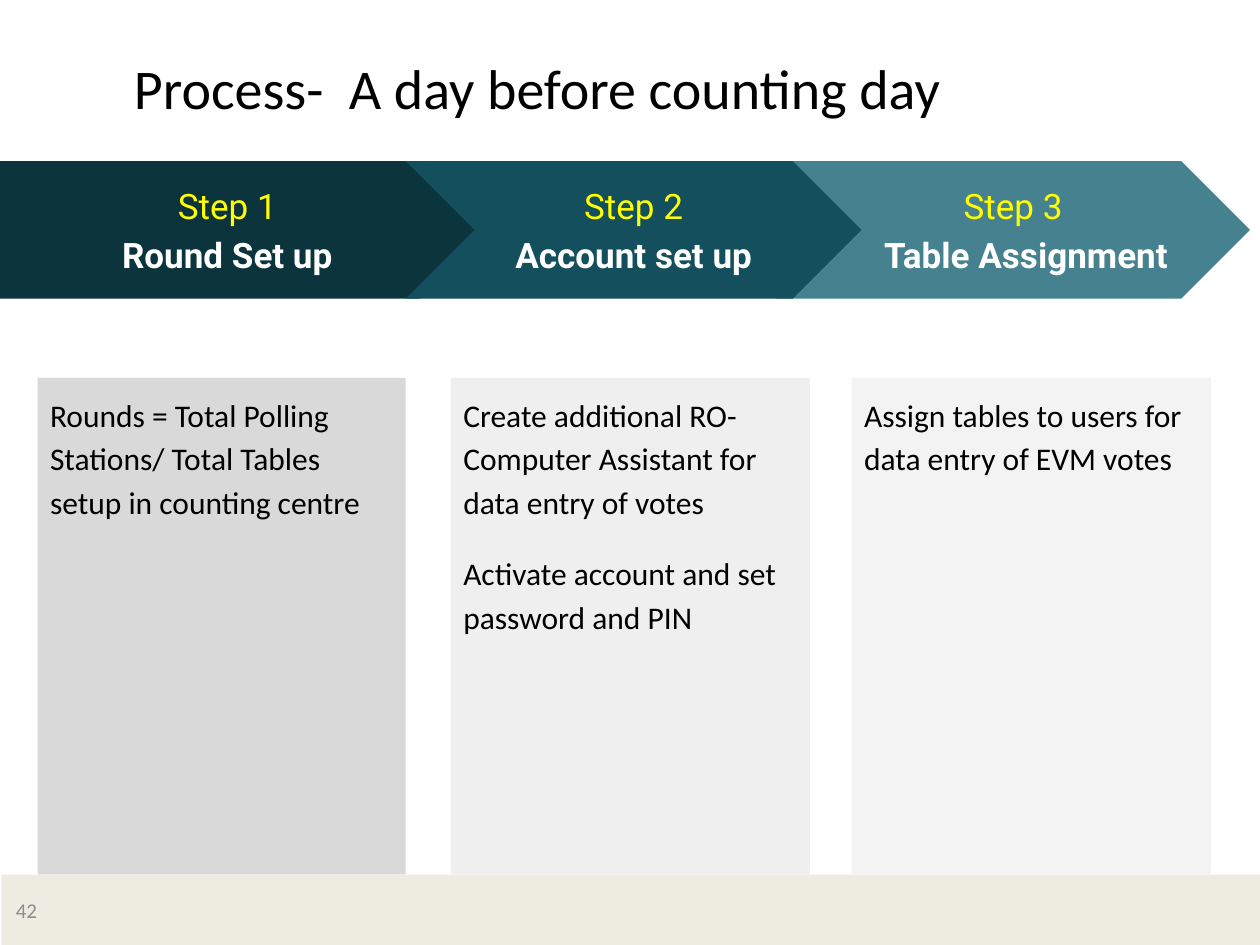
from dataclasses import dataclass

from pptx import Presentation
from pptx.dml.color import RGBColor
from pptx.enum.shapes import MSO_SHAPE
from pptx.enum.text import MSO_ANCHOR, MSO_AUTO_SIZE, PP_ALIGN
from pptx.util import Cm, Pt


@dataclass(frozen=True)
class Theme:
    ink: str = "000000"
    white: str = "FFFFFF"
    accent: str = "FFFF00"
    muted: str = "8C8C8C"
    band: str = "EEECE1"
    body: str = "Calibri"
    head: str = "Roboto"
    title: int = 32
    step: int = 20
    text: int = 18
    small: int = 12


THEME = Theme()
PAD = 0.25

# Each step: heading, heading indent, arrow, card and paragraphs
STEPS = [
    dict(name="Step 1", head="Round Set up", indent=0, kind=MSO_SHAPE.PENTAGON,
         left=0, width=9.86, fill="0C343D", card=(0.76, 7.42, "D9D9D9"),
         notes=["Rounds = Total Polling Stations/ Total Tables setup in counting centre"]),
    dict(name="Step 2", head="Account set up", indent=0, kind=MSO_SHAPE.CHEVRON,
         left=8.18, width=9.19, fill="134F5C", card=(9.09, 7.24, "EFEFEF"),
         notes=["Create additional RO- Computer Assistant for data entry of votes",
                "Activate account and set password and PIN"]),
    dict(name="Step 3", head="Table Assignment", indent=0.52, kind=MSO_SHAPE.CHEVRON,
         left=15.65, width=9.55, fill="45818E", card=(17.17, 7.24, "F3F3F3"),
         notes=["Assign tables to users for data entry of EVM votes"]),
]


def set_frame(frame, anchor, pad=0):
    frame.word_wrap = True
    frame.auto_size = MSO_AUTO_SIZE.NONE
    frame.vertical_anchor = anchor
    frame.margin_left = frame.margin_right = Cm(pad)
    frame.margin_top = frame.margin_bottom = Cm(pad)


def put_text(frame, text, size, color, font=THEME.body, bold=False,
             align=PP_ALIGN.LEFT, line=1.0, before=0, indent=0):
    """Fill the first paragraph, or add one after the text already there."""
    para = frame.add_paragraph() if frame.text else frame.paragraphs[0]
    para.alignment, para.line_spacing = align, line
    para.space_before, para.space_after = Pt(before), Pt(0)
    if indent:
        para._p.get_or_add_pPr().set("marL", str(Cm(indent)))
    run = para.add_run()
    run.text = text
    run.font.name, run.font.size, run.font.bold = font, Pt(size), bold
    run.font.color.rgb = RGBColor.from_string(color)


def add_box(slide, kind, box, fill):
    shape = slide.shapes.add_shape(kind, *map(Cm, box))
    shape.shadow.inherit = False
    shape.fill.solid()
    shape.fill.fore_color.rgb = RGBColor.from_string(fill)
    shape.line.fill.background()
    return shape


def add_title(slide, box, text):
    title = slide.shapes.title
    title.left, title.top, title.width, title.height = map(Cm, box)
    set_frame(title.text_frame, MSO_ANCHOR.BOTTOM)
    put_text(title.text_frame, text, THEME.title, THEME.ink,
             align=PP_ALIGN.CENTER, line=0.8)


def add_foot(slide, box, number):
    left, top, width, height = box
    add_box(slide, MSO_SHAPE.RECTANGLE, (left + 0.03, top, width, height), THEME.band)
    label = slide.shapes.add_textbox(*map(Cm, (left, top, 1.07, height)))
    set_frame(label.text_frame, MSO_ANCHOR.MIDDLE)
    put_text(label.text_frame, number, THEME.small, THEME.muted, align=PP_ALIGN.CENTER)


def add_step(slide, box, step):
    left, top, _, height = box

    # Arrow with step name and heading
    arrow = add_box(slide, step["kind"],
                    (left + step["left"], top, step["width"], 2.77), step["fill"])
    frame = arrow.text_frame
    set_frame(frame, MSO_ANCHOR.MIDDLE, PAD)
    put_text(frame, step["name"], THEME.step, THEME.accent, font=THEME.head,
             align=PP_ALIGN.CENTER)
    put_text(frame, step["head"], THEME.step, THEME.white, font=THEME.head,
             bold=True, align=PP_ALIGN.CENTER, line=1.15, indent=step["indent"])

    # Card with details, down to the bottom of the box
    start, width, fill = step["card"]
    drop = 4.37
    card = add_box(slide, MSO_SHAPE.RECTANGLE,
                   (left + start, top + drop, width, height - drop), fill)
    set_frame(card.text_frame, MSO_ANCHOR.TOP, PAD)
    for i, note in enumerate(step["notes"]):
        put_text(card.text_frame, note, THEME.text, THEME.ink, line=1.15,
                 before=16 if i else 0)


def add_steps(slide, box):
    first, second, third = STEPS
    # The second arrow overlaps both of its neighbours
    for step in (third, first, second):
        add_step(slide, box, step)


def main():
    deck = Presentation()
    deck.slide_width, deck.slide_height = Cm(25.4), Cm(19.05)
    slide = deck.slides.add_slide(deck.slide_layouts.get_by_name("Title Only"))
    add_foot(slide, (0, 17.63, 25.4, 1.42), "42")
    add_title(slide, (0, 0.79, 21.67, 1.63), "Process-  A day before counting day")
    add_steps(slide, (0, 3.25, 25.4, 14.38))
    deck.save("out.pptx")


if __name__ == "__main__":
    main()
